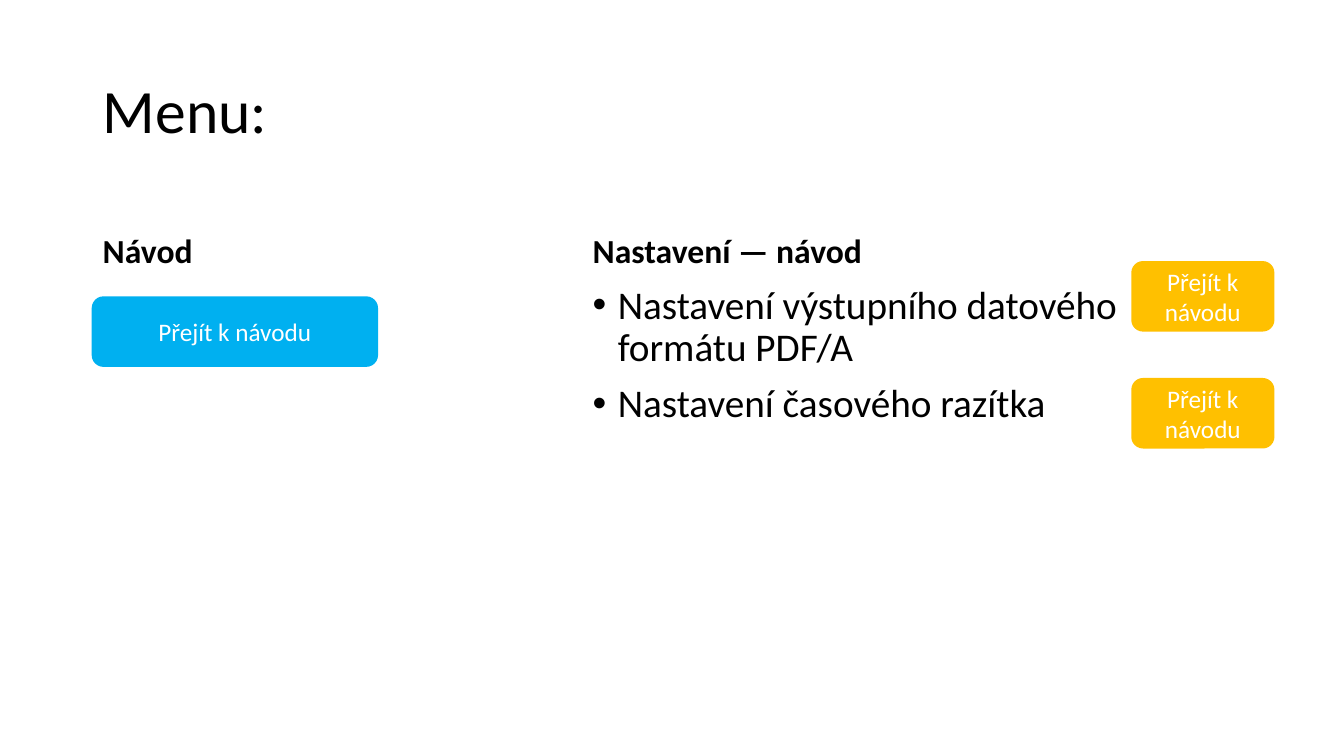
from dataclasses import dataclass

from lxml import etree
from pptx import Presentation
from pptx.dml.color import RGBColor
from pptx.enum import shapes, text
from pptx.oxml import ns
from pptx.util import Inches, Pt


@dataclass(frozen=True)
class Theme:
    font: str = "Calibri"
    ink: str = "000000"
    button_text: str = "FFFFFF"
    blue: str = "00B0F0"
    amber: str = "FFC000"
    title: int = 44
    heading: int = 24
    body: int = 28
    button: int = 18


theme = Theme()


def write(frame, lines, size, color=theme.ink, bold=False, bullet=False,
          align=text.PP_ALIGN.LEFT, anchor=text.MSO_ANCHOR.TOP, spacing=0.9, gap=10):
    frame.word_wrap = True
    frame.vertical_anchor = anchor
    for index, line in enumerate(lines):
        para = frame.paragraphs[0] if index == 0 else frame.add_paragraph()
        if bullet:
            props = para._p.get_or_add_pPr()
            props.set("marL", str(Inches(0.25)))
            props.set("indent", str(Inches(-0.25)))
            etree.SubElement(props, ns.qn("a:buFont")).set("typeface", "Arial")
            etree.SubElement(props, ns.qn("a:buChar")).set("char", "•")
        para.alignment = align
        para.line_spacing = spacing
        para.space_before = Pt(gap if index else 0)
        span = para.add_run()
        span.text = line
        span.font.name = theme.font
        span.font.size = Pt(size)
        span.font.bold = bold
        span.font.color.rgb = RGBColor.from_string(color)


deck = Presentation()
deck.slide_width, deck.slide_height = Inches(13.33), Inches(7.5)
page = deck.slides.add_slide(deck.slide_layouts[5])

title = page.shapes.title
title.left, title.top = Inches(0.92), Inches(0.4)
title.width, title.height = Inches(11.5), Inches(1.45)
write(title.text_frame, ["Menu:"], theme.title, anchor=text.MSO_ANCHOR.MIDDLE)

for heading, left, width in [("Návod", 0.92, 5.64), ("Nastavení — návod", 5.78, 5.67)]:
    box = page.shapes.add_textbox(Inches(left), Inches(1.84), Inches(width), Inches(0.9))
    write(box.text_frame, [heading], theme.heading, bold=True,
          anchor=text.MSO_ANCHOR.BOTTOM)

settings = page.shapes.add_textbox(Inches(5.78), Inches(2.78), Inches(5.67), Inches(4.03))
write(settings.text_frame,
      ["Nastavení výstupního datového formátu PDF/A", "Nastavení časového razítka"],
      theme.body, bullet=True)

for left, top, width, fill in [
    (0.91, 2.94, 2.84, theme.blue),
    (11.22, 2.59, 1.42, theme.amber),
    (11.22, 3.75, 1.42, theme.amber),
]:
    button = page.shapes.add_shape(shapes.MSO_SHAPE.ROUNDED_RECTANGLE,
                                   Inches(left), Inches(top), Inches(width), Inches(0.7))
    button.shadow.inherit = False
    button.fill.solid()
    button.fill.fore_color.rgb = RGBColor.from_string(fill)
    button.line.fill.background()
    write(button.text_frame, ["Přejít k návodu"], theme.button, color=theme.button_text,
          align=text.PP_ALIGN.CENTER, anchor=text.MSO_ANCHOR.MIDDLE, spacing=1.0)

deck.save("out.pptx")
